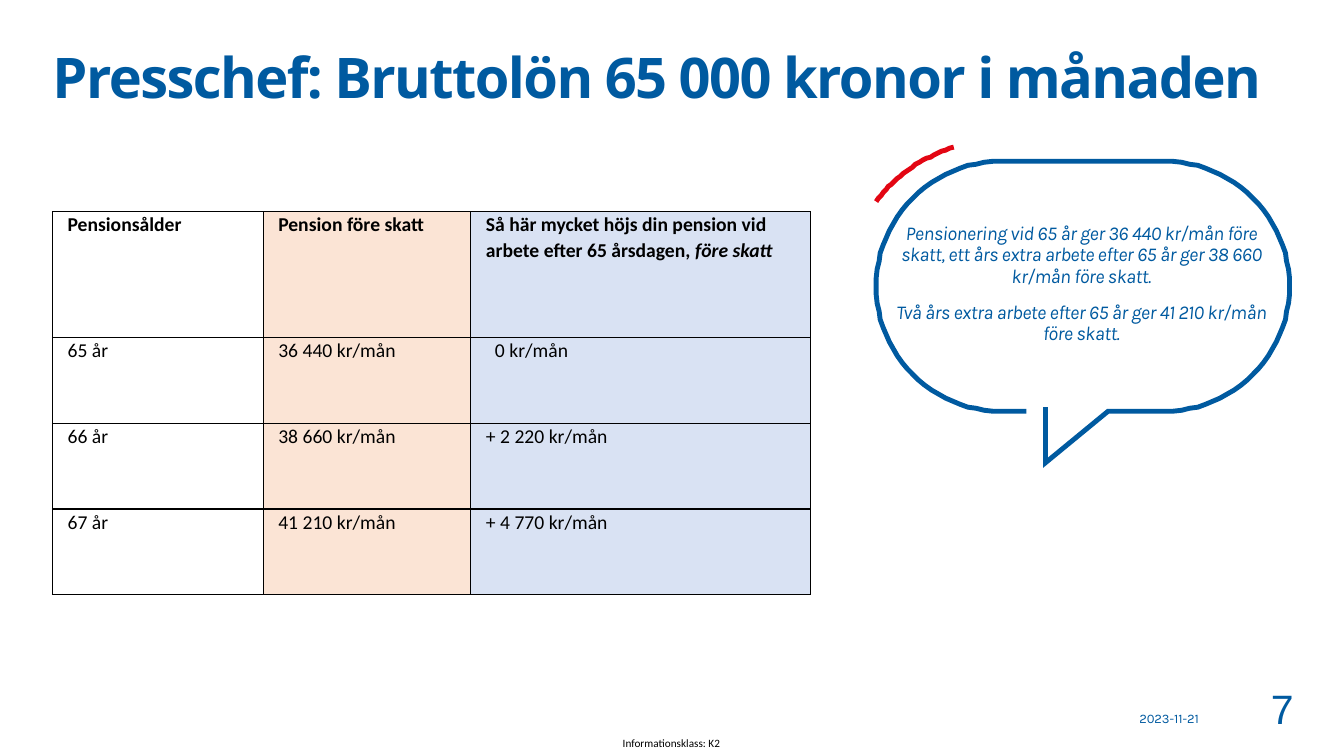
import dataclasses
import typing

import lxml.etree
import pptx
import pptx.dml.color
import pptx.enum.text
import pptx.oxml.ns
import pptx.util

EMU_PER_PX = 9144  # 100 px to the inch
BLUE, RED, BLACK = "005AA0", "E30613", "000000"
ALIGN = pptx.enum.text.PP_ALIGN
ANCHOR = pptx.enum.text.MSO_ANCHOR
Point = tuple[float, float]


@dataclasses.dataclass
class Run:
    text: str
    font: str
    size: float
    color: str = BLUE
    bold: bool = False
    italic: bool = False
    spacing: int = 0  # hundredths of a point


@dataclasses.dataclass
class TextBox:
    box: tuple[int, int, int, int]
    paragraphs: list[Run]
    anchor: ANCHOR
    format: dict[str, typing.Any]
    gap: float = 0
    inset: int = 0
    wrap: bool = True


def px(length: float) -> int:
    return pptx.util.Emu(round(length * EMU_PER_PX))


def rgb(color: str) -> pptx.dml.color.RGBColor:
    return pptx.dml.color.RGBColor.from_string(color)


def set_values(target: typing.Any, values: dict[str, typing.Any]) -> None:
    for name, value in values.items():
        setattr(target, name, value)


def add_run(paragraph: typing.Any, run: Run) -> None:
    text_run = paragraph.add_run()
    text_run.text = run.text
    set_values(text_run.font, {"name": run.font, "size": pptx.util.Pt(run.size),
                               "bold": run.bold, "italic": run.italic})
    text_run.font.color.rgb = rgb(run.color)
    if run.spacing:
        text_run.font._element.set("spc", str(run.spacing))


def fill_text(shape: typing.Any, content: TextBox) -> None:
    set_values(shape, dict(zip(("left", "top", "width", "height"), map(px, content.box))))
    frame = shape.text_frame
    set_values(frame, {"word_wrap": content.wrap, "vertical_anchor": content.anchor,
                       "auto_size": pptx.enum.text.MSO_AUTO_SIZE.NONE})
    set_values(frame, {f"margin_{side}": px(content.inset)
                       for side in ("left", "top", "right", "bottom")})
    for index, run in enumerate(content.paragraphs):
        paragraph = frame.add_paragraph() if index else frame.paragraphs[0]
        set_values(paragraph, content.format)
        paragraph.space_before = pptx.util.Pt(content.gap if index else 0)
        add_run(paragraph, run)


def curve(start: Point, control1: Point, control2: Point, end: Point,
          steps: int = 24) -> list[Point]:
    """Points along a cubic curve, without its start."""
    points = []
    for step in range(1, steps + 1):
        t = step / steps
        weights = ((1 - t) ** 3, 3 * t * (1 - t) ** 2, 3 * t * t * (1 - t), t ** 3)
        x, y = (sum(weight * value for weight, value in zip(weights, axis))
                for axis in zip(start, control1, control2, end))
        points.append((x, y))
    return points


def add_outline(shapes: typing.Any, points: list[Point], color: str) -> None:
    builder = shapes.build_freeform(*points[0], scale=EMU_PER_PX)
    builder.add_line_segments(points[1:], close=False)
    shape = builder.convert_to_shape()
    shape.shadow.inherit = False
    shape.fill.background()
    shape.line.color.rgb = rgb(color)
    shape.line.width = pptx.util.Pt(3.5)
    line = shape._element.spPr.find(pptx.oxml.ns.qn("a:ln"))
    lxml.etree.SubElement(line, pptx.oxml.ns.qn("a:miter"), lim="800000")


def add_speech_bubble(slide: typing.Any) -> None:
    left, top, right, bottom = 869, 160, 1279, 408
    middle, near, far = 284, 993, 1155  # ends of the straight edges
    pull = 68  # length of the curve handles
    outline = [(1037, 404), (1037, 459), (1099, bottom), (far, bottom)]
    corners = [
        ((far + pull, bottom), (right, middle + pull), (right, middle)),
        ((right, middle - pull), (far + pull, top), (far, top)),
        ((near - pull, top), (left, middle - pull), (left, middle)),
        ((left, middle + pull), (near - pull, bottom), (near, bottom)),
    ]
    for index, corner in enumerate(corners):
        if index == 2:
            outline.append((near, top))
        outline += curve(outline[-1], *corner)
    outline.append((1018, bottom))
    accent_start = (946, 146)
    accent = [accent_start] + curve(accent_start, (913, 157), (887, 175), (869, 200))
    group = slide.shapes.add_group_shape()
    add_outline(group.shapes, outline, BLUE)
    add_outline(group.shapes, accent, RED)


def add_border(cell: typing.Any) -> None:
    properties = cell._tc.get_or_add_tcPr()
    for side in ("lnL", "lnR", "lnT", "lnB"):
        line = lxml.etree.SubElement(properties, pptx.oxml.ns.qn(f"a:{side}"), w="12700")
        fill = lxml.etree.SubElement(line, pptx.oxml.ns.qn("a:solidFill"))
        lxml.etree.SubElement(fill, pptx.oxml.ns.qn("a:srgbClr"), val=BLACK)


def add_pension_table(slide: typing.Any) -> None:
    widths, heights = [209, 206, 337], [125, 85, 85, 85]
    column_fills = [None, "FBE4D5", "D9E2F3"]
    rows = [
        ["Pensionsålder", "Pension före skatt",
         "Så här mycket höjs din pension vid arbete efter 65 årsdagen, "],
        ["65 år", "36 440 kr/mån", "0 kr/mån"],
        ["66 år", "38 660 kr/mån", "+ 2 220 kr/mån"],
        ["67 år", "41 210 kr/mån", "+ 4 770 kr/mån"],
    ]
    frame = slide.shapes.add_table(len(rows), len(widths), px(52), px(210),
                                   px(sum(widths)), px(sum(heights)))
    table = frame.table
    set_values(table, {"first_row": False, "horz_banding": False})
    for column, width in zip(table.columns, widths):
        column.width = px(width)
    for row, height in zip(table.rows, heights):
        row.height = px(height)
    for row_index, texts in enumerate(rows):
        for column_index, text in enumerate(texts):
            cell = table.cell(row_index, column_index)
            indent = 24 if text.startswith("0 ") else 15
            set_values(cell, {"margin_left": px(indent), "margin_right": px(15),
                              "margin_top": 0, "margin_bottom": 0})
            add_border(cell)
            if column_fills[column_index]:
                cell.fill.solid()
                cell.fill.fore_color.rgb = rgb(column_fills[column_index])
            else:
                cell.fill.background()
            paragraph = cell.text_frame.paragraphs[0]
            set_values(paragraph, {"line_spacing": 1.07, "space_after": pptx.util.Pt(8)})
            add_run(paragraph, Run(text, "Calibri", 14, BLACK, bold=row_index == 0))
    add_run(table.cell(0, 2).text_frame.paragraphs[0],
            Run("före skatt", "Calibri", 14, BLACK, bold=True, italic=True))


TITLE = TextBox(
    (52, 52, 1229, 84),
    [Run("Presschef: Bruttolön 65 000 kronor i månaden", "Noto Sans", 40, bold=True, spacing=-110)],
    ANCHOR.TOP, {"alignment": ALIGN.LEFT, "line_spacing": 0.85})
TEXT_BOXES = [
    TextBox((864, 158, 417, 248), [
        Run("Pensionering vid 65 år ger 36 440 kr/mån före skatt, ett års extra arbete "
            "efter 65 år ger 38 660 kr/mån före skatt.", "Karla", 14, italic=True, spacing=-30),
        Run("Två års extra arbete efter 65 år ger 41 210 kr/mån före skatt.",
            "Karla", 14, italic=True, spacing=-30),
    ], ANCHOR.MIDDLE, {"alignment": ALIGN.CENTER, "line_spacing": 0.9}, gap=10.7, inset=20),
    TextBox((1130, 688, 68, 32), [Run("2023-11-21", "Karla", 9.3)],
            ANCHOR.BOTTOM, {"alignment": ALIGN.LEFT}),
    TextBox((1198, 685, 85, 42), [Run("7", "Arial", 29.3)],
            ANCHOR.BOTTOM, {"alignment": ALIGN.RIGHT}, wrap=False),
    TextBox((604, 725, 124, 25), [Run("Informationsklass: K2", "Calibri", 8, BLACK)],
            ANCHOR.MIDDLE, {"alignment": ALIGN.CENTER}),
]


def main() -> None:
    presentation = pptx.Presentation()
    set_values(presentation, {"slide_width": px(1333), "slide_height": px(750)})
    slide = presentation.slides.add_slide(presentation.slide_layouts[5])
    # Title and table
    fill_text(slide.shapes.title, TITLE)
    add_pension_table(slide)
    # Speech bubble, then its text and the footer
    add_speech_bubble(slide)
    for content in TEXT_BOXES:
        fill_text(slide.shapes.add_textbox(0, 0, 0, 0), content)
    presentation.save("out.pptx")


if __name__ == "__main__":
    main()
